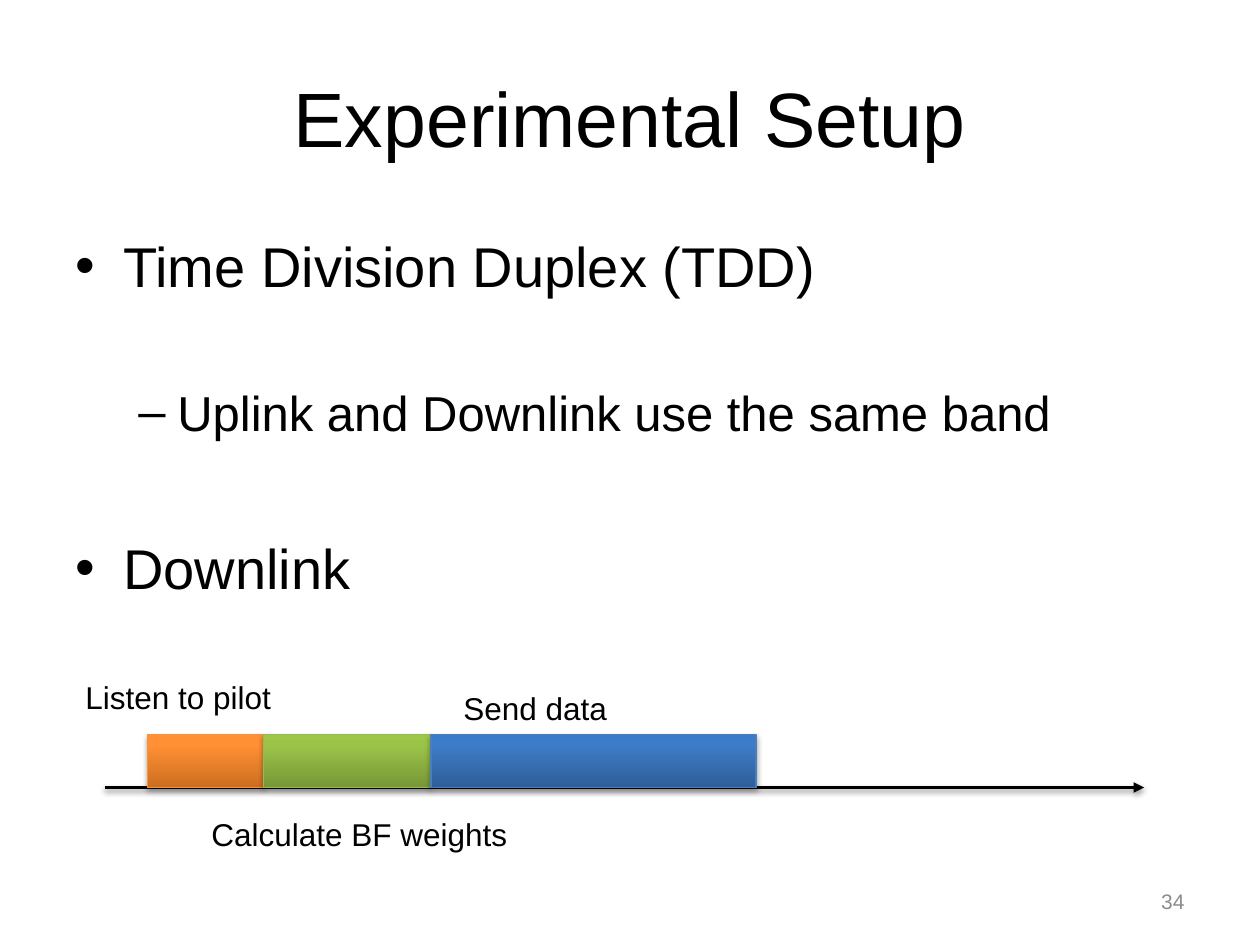
import pptx
import pptx.util
import pptx.oxml
import pptx.oxml.ns
import pptx.dml.color
import pptx.enum.shapes
import pptx.enum.text

Inches, Pt = pptx.util.Inches, pptx.util.Pt
ALIGN = pptx.enum.text.PP_ALIGN
ANCHOR = pptx.enum.text.MSO_ANCHOR
SHAPE = pptx.enum.shapes.MSO_SHAPE
LINK = pptx.enum.shapes.MSO_CONNECTOR
qn = pptx.oxml.ns.qn
NS = pptx.oxml.ns.nsdecls("a")

# Content
FONT = "Arial"
COLORS = {"ink": "000000", "page": "8C8C8C"}
TITLE = "Experimental Setup"
PAGE = "34"
# text, bullet, size, left indent, hanging indent, space before
POINTS = [
    ("Time Division Duplex (TDD)", "•", 32, 0.38, 0.38, 0),
    ("Uplink and Downlink use the same band", "–", 28, 0.81, 0.31, 47.5),
    ("Downlink", "•", 32, 0.38, 0.38, 53),
]
# width, line colour, gradient from bottom to top
PHASES = [
    (0.92, "F69240", [(0, "CC6E20"), (80, "FF9034"), (100, "FF9136")]),
    (1.33, "98B955", [(0, "779737"), (80, "9BC348"), (100, "9DC746")]),
    (2.58, "4B7EBC", [(0, "2F5F99"), (80, "3D7CC7"), (100, "3A7CCB")]),
]
LABELS = [
    ("Listen to pilot", 0.58, 5.33, 1.83),
    ("Calculate BF weights", 1.58, 6.42, 2.67),
    ("Send data", 3.58, 5.42, 1.83),
]
AXIS, START, END = 6.25, 0.83, 9.08
FIRST, HIGH = 1.17, 0.42

deck = pptx.Presentation()
deck.slide_width, deck.slide_height = Inches(10), Inches(7.5)
slide = deck.slides.add_slide(deck.slide_layouts[6])


def rgb(code):
    return pptx.dml.color.RGBColor.from_string(code)


def style(font, size, color):
    font.name, font.size = FONT, Pt(size)
    font.color.rgb = rgb(color)


def add_box(left, top, width, height, anchor=ANCHOR.TOP):
    box = slide.shapes.add_textbox(*map(Inches, (left, top, width, height)))
    frame = box.text_frame
    frame.word_wrap = True
    frame.vertical_anchor = anchor
    return frame


def add_text(text, place, size, color=COLORS["ink"], align=ALIGN.LEFT,
             anchor=ANCHOR.TOP):
    frame = add_box(*place, anchor)
    frame.text = text
    para = frame.paragraphs[0]
    para.alignment = align
    style(para.runs[0].font, size, color)


def add_shadow(item, alpha, dist):
    props = item._element.spPr
    for old in props.findall(qn("a:effectLst")):
        props.remove(old)
    props.append(pptx.oxml.parse_xml(
        f'<a:effectLst {NS}><a:outerShdw blurRad="{Pt(3.1)}" dist="{Pt(dist)}" '
        f'dir="5400000" rotWithShape="0"><a:srgbClr val="{COLORS["ink"]}">'
        f'<a:alpha val="{alpha * 1000}"/></a:srgbClr></a:outerShdw></a:effectLst>'))


def fill_ramp(shape, stops):
    shape.fill.gradient()
    shape.fill.gradient_angle = 90
    ramp = shape._element.spPr.find(".//" + qn("a:gsLst"))
    for old in list(ramp):
        ramp.remove(old)
    for spot, color in stops:
        ramp.append(pptx.oxml.parse_xml(
            f'<a:gs {NS} pos="{spot * 1000}"><a:srgbClr val="{color}"/></a:gs>'))


# Title and page number
add_text(TITLE, (0.5, 0.3, 9, 1.25), 44, align=ALIGN.CENTER, anchor=ANCHOR.MIDDLE)
add_text(PAGE, (7.17, 6.95, 2.33, 0.4), 12, COLORS["page"], ALIGN.RIGHT, ANCHOR.MIDDLE)

# Bullet points
body = add_box(0.5, 1.75, 9, 4.95)
body.margin_top = Inches(0.09)
for i, (text, mark, size, left, hang, gap) in enumerate(POINTS):
    para = body.add_paragraph() if i else body.paragraphs[0]
    para.text = text
    para.space_before = Pt(gap)
    props = para._p.get_or_add_pPr()
    props.set("marL", str(Inches(left)))
    props.set("indent", str(-Inches(hang)))
    props.append(pptx.oxml.parse_xml(f'<a:buFont {NS} typeface="{FONT}"/>'))
    props.append(pptx.oxml.parse_xml(f'<a:buChar {NS} char="{mark}"/>'))
    style(para.runs[0].font, size, COLORS["ink"])

# Time axis
axis = slide.shapes.add_connector(
    LINK.STRAIGHT, *map(Inches, (START, AXIS, END, AXIS)))
axis.line.color.rgb = rgb(COLORS["ink"])
axis.line.width = Pt(2)
axis.line._get_or_add_ln().append(
    pptx.oxml.parse_xml(f'<a:tailEnd {NS} type="triangle"/>'))
add_shadow(axis, 38, 1.6)

# Phases, each starting where the last one ends
left = FIRST
for width, edge, stops in PHASES:
    bar = slide.shapes.add_shape(
        SHAPE.RECTANGLE, *map(Inches, (left, AXIS - HIGH, width, HIGH)))
    fill_ramp(bar, stops)
    bar.line.color.rgb = rgb(edge)
    bar.line.width = Pt(0.75)
    add_shadow(bar, 35, 1.8)
    left += width

# Phase labels
for text, x, y, width in LABELS:
    add_text(text, (x, y, width, 0.4), 18)

deck.save("out.pptx")
